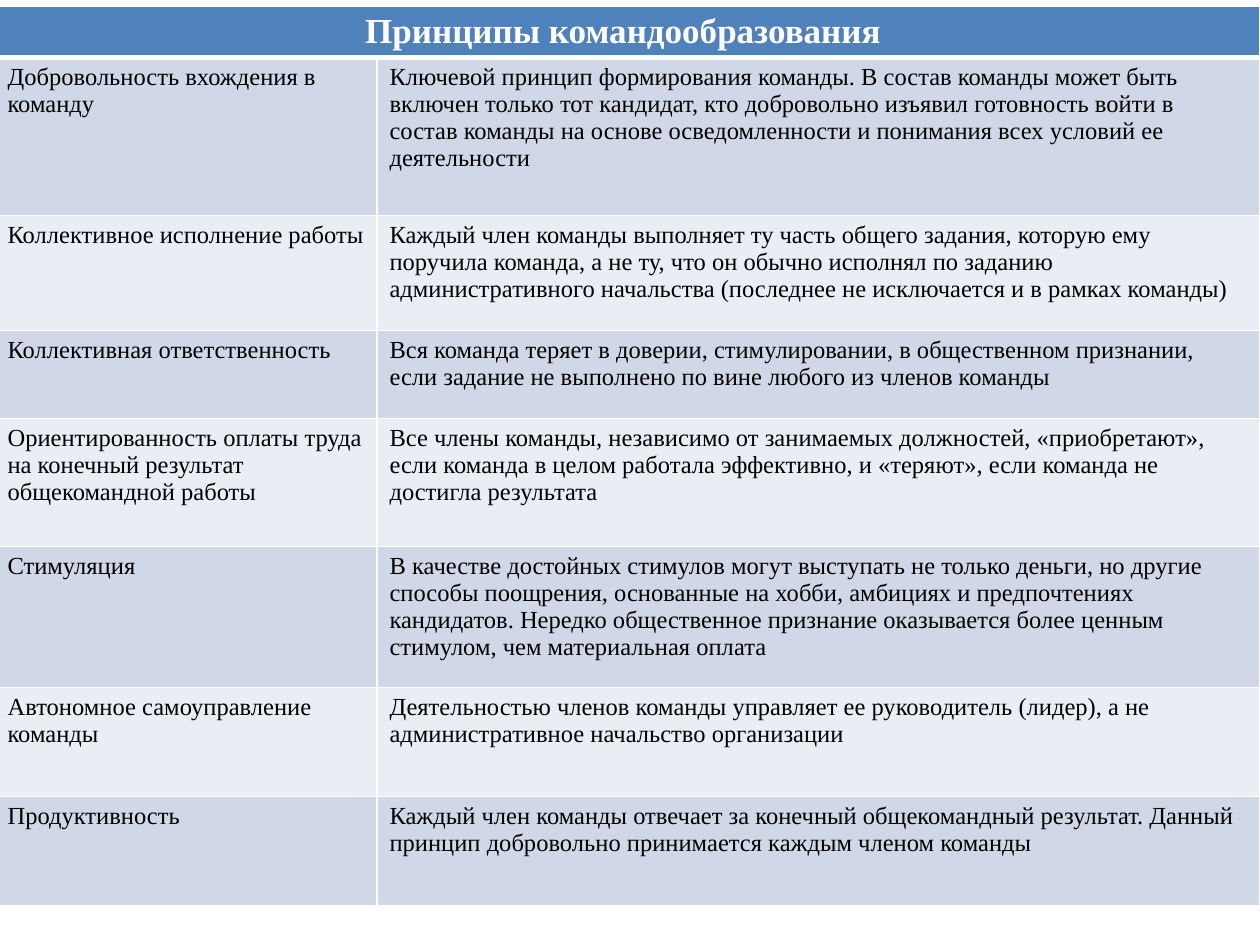
from lxml.etree import SubElement
from pptx import Presentation
from pptx.dml.color import RGBColor
from pptx.enum.text import PP_ALIGN
from pptx.oxml.ns import qn
from pptx.util import Pt

SCALE = 914400 / 126
FONT = "Times New Roman"
COLORS = {
    "head": "4F81BD",
    "odd": "D0D8E8",
    "even": "E9EDF4",
    "white": "FFFFFF",
    "black": "000000",
}
TITLE = "Принципы командообразования "
ROWS = [
    (158, "Добровольность вхождения в команду",
     "Ключевой принцип формирования команды. В состав команды может быть "
     "включен только тот кандидат, кто добровольно изъявил готовность войти в "
     "состав команды на основе осведомленности и понимания всех условий ее "
     "деятельности"),
    (115, "Коллективное исполнение работы",
     "Каждый член команды выполняет ту часть общего задания, которую ему "
     "поручила команда, а не ту, что он обычно исполнял по заданию "
     "административного начальства (последнее не исключается и в рамках команды)"),
    (88, "Коллективная ответственность",
     "Вся команда теряет в доверии, стимулировании, в общественном признании, "
     "если задание не выполнено по вине любого из членов команды"),
    (128, "Ориентированность оплаты труда на конечный результат общекомандной работы",
     "Все члены команды, независимо от занимаемых должностей, «приобретают», "
     "если команда в целом работала эффективно, и «теряют», если команда не "
     "достигла результата"),
    (141, "Стимуляция",
     "В качестве достойных стимулов могут выступать не только деньги, но другие "
     "способы поощрения, основанные на хобби, амбициях и предпочтениях "
     "кандидатов. Нередко общественное признание оказывается более ценным "
     "стимулом, чем материальная оплата"),
    (109, "Автономное самоуправление команды",
     "Деятельностью членов команды управляет ее руководитель (лидер), а не "
     "административное начальство организации"),
    (109, "Продуктивность",
     "Каждый член команды отвечает за конечный общекомандный результат. Данный "
     "принцип добровольно принимается каждым членом команды"),
]


def px(size):
    return round(size * SCALE)


def write(frame, text, size=14, color="black", bold=False, align=PP_ALIGN.LEFT):
    para = frame.paragraphs[0]
    para.alignment = align
    run = para.add_run()
    run.text = text
    font = run.font
    font.name = FONT
    font.size = Pt(size)
    font.bold = bold
    font.color.rgb = RGBColor.from_string(COLORS[color])


class Deck:
    def __init__(self, width, height):
        self.show = Presentation()
        self.show.slide_width = px(width)
        self.show.slide_height = px(height)
        self.slide = self.show.slides.add_slide(self.show.slide_layouts[6])

    def edge(self, cell, base):
        props = cell._tc.get_or_add_tcPr()
        for place, side in enumerate("LRTB"):
            width = base if side == "B" else 1
            line = SubElement(props, qn(f"a:ln{side}"), w=str(Pt(width)))
            fill = SubElement(line, qn("a:solidFill"))
            SubElement(fill, qn("a:srgbClr"), val=COLORS["white"])
            props.remove(line)
            props.insert(place, line)

    def paint(self, cell, color, base=1):
        cell.fill.solid()
        cell.fill.fore_color.rgb = RGBColor.from_string(COLORS[color])
        self.edge(cell, base)

    def table(self, left, top, cols, head, title, rows):
        highs = [head] + [row[0] for row in rows]
        frame = self.slide.shapes.add_table(
            len(highs), len(cols), px(left), px(top), px(sum(cols)), px(sum(highs)))
        grid = frame.table
        for col, width in zip(grid.columns, cols):
            col.width = px(width)
        for row, height in zip(grid.rows, highs):
            row.height = px(height)
        first = grid.cell(0, 0)
        first.merge(grid.cell(0, len(cols) - 1))
        for cell in grid.rows[0].cells:
            self.paint(cell, "head", 3)
        write(first.text_frame, title, size=20, color="white", bold=True,
              align=PP_ALIGN.CENTER)
        for index, (_, *texts) in enumerate(rows, 1):
            for cell, text in zip(grid.rows[index].cells, texts):
                self.paint(cell, "odd" if index % 2 else "even")
                write(cell.text_frame, text)

    def save(self):
        self.show.save("out.pptx")


def main():
    deck = Deck(1260, 945)
    deck.table(-5, 6, [382, 883], 51, TITLE, ROWS)
    deck.save()


if __name__ == "__main__":
    main()
